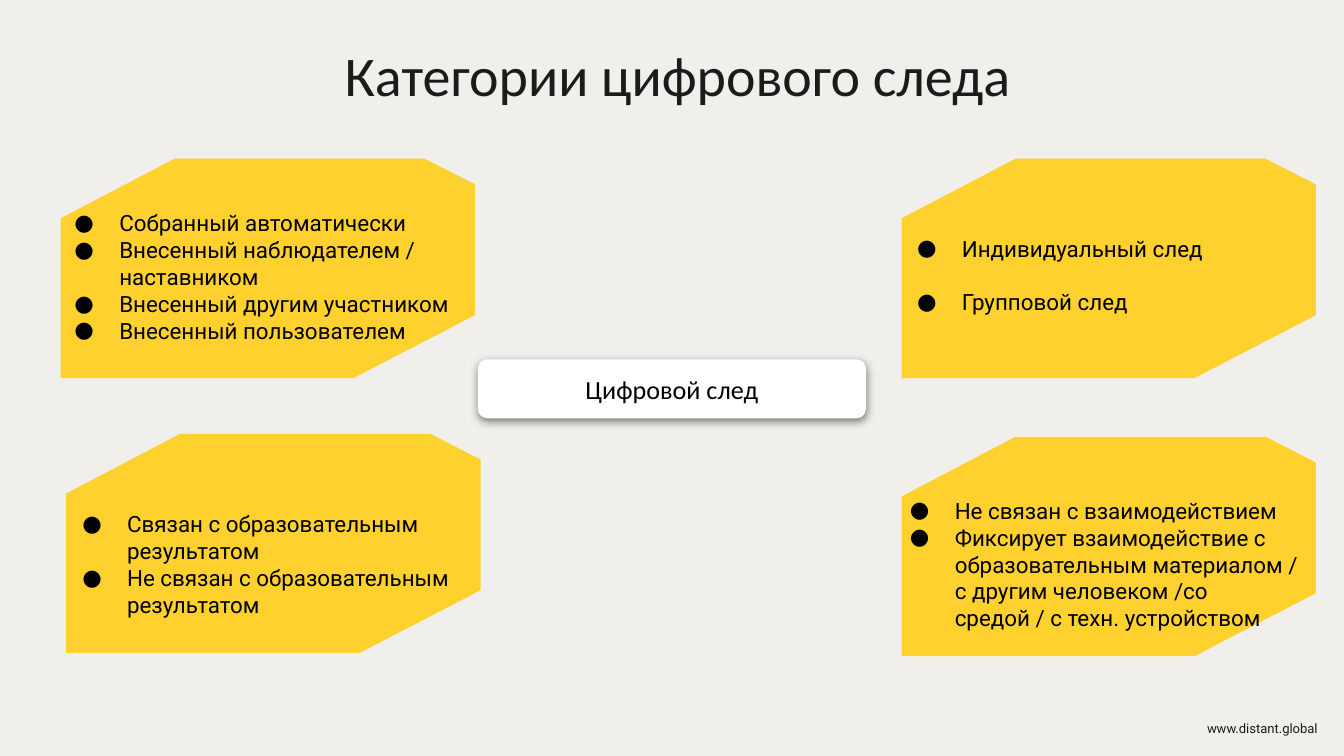
import pptx
import pptx.dml.color
import pptx.enum.shapes
import pptx.enum.text
import pptx.oxml
import pptx.oxml.ns
import pptx.util
from lxml import etree

Pt = pptx.util.Pt
ALIGN = pptx.enum.text.PP_ALIGN
ANCHOR = pptx.enum.text.MSO_ANCHOR

# Content
TITLE = "Категории цифрового следа"
CENTER = "Цифровой след"
FOOTER = "www.distant.global"
# Each category: panel corner, text box (left, top, width, height), item gap, items
CATEGORIES = [
    ((32.5, 85), (20.8, 105, 236.2, 87), 0, [
        "Собранный автоматически",
        "Внесенный наблюдателем / наставником",
        "Внесенный другим участником",
        "Внесенный пользователем",
    ]),
    ((35.5, 232.4), (25, 266.2, 236.2, 73), 0, [
        "Связан с образовательным результатом",
        "Не связан с образовательным результатом",
    ]),
    ((483, 85), (472.2, 118.6, 236.2, 58), 14.4, [
        "Индивидуальный след",
        "Групповой след",
    ]),
    ((483, 234), (468.4, 259, 236.2, 87), 0, [
        "Не связан с взаимодействием",
        "Фиксирует взаимодействие с образовательным материалом / "
        "с другим человеком /со средой / с техн. устройством",
    ]),
]

# Look
BACKGROUND, INK, BLACK, WHITE, YELLOW = "F0EFEB", "1B1B19", "000000", "FFFFFF", "FFD12E"
PANEL_OUTLINE = [(0, 117.5), (0, 32), (61, 0), (195, 0),
                 (222, 13.8), (222, 83.8), (157, 117.5)]
PADDING = 7.2
INDENT = 36
HANGING = 24


def color(hex_value):
    return pptx.dml.color.RGBColor.from_string(hex_value)


def fill_plain(shape, hex_value):
    shape.fill.solid()
    shape.fill.fore_color.rgb = color(hex_value)
    shape.line.fill.background()
    shape.shadow.inherit = False


def set_font(para, name, size, hex_value):
    para.font.name = name
    para.font.size = Pt(size)
    para.font.color.rgb = color(hex_value)


def set_frame(shape, padding):
    frame = shape.text_frame
    frame.word_wrap = True
    frame.margin_left = frame.margin_right = Pt(padding)
    frame.margin_top = frame.margin_bottom = Pt(padding)
    return frame


def add_text(page, place, padding=0):
    return set_frame(page.shapes.add_textbox(*map(Pt, place)), padding)


def add_bullet(para):
    properties = para._p.get_or_add_pPr()
    properties.set("marL", str(Pt(INDENT)))
    properties.set("indent", str(-Pt(HANGING)))
    tag = pptx.oxml.ns.qn
    bullet_color = etree.SubElement(properties, tag("a:buClr"))
    etree.SubElement(bullet_color, tag("a:srgbClr"), val=BLACK)
    etree.SubElement(properties, tag("a:buFont"), typeface="Roboto")
    etree.SubElement(properties, tag("a:buChar"), char="●")


def add_shadow(shape):
    tag = pptx.oxml.ns.qn
    effects = shape._element.spPr.find(tag("a:effectLst"))
    shadow = etree.SubElement(effects, tag("a:outerShdw"), blurRad=str(Pt(4.5)),
                              dist=str(Pt(1.5)), dir="5400000", rotWithShape="0")
    shade = etree.SubElement(shadow, tag("a:srgbClr"), val=BLACK)
    etree.SubElement(shade, tag("a:alpha"), val="50000")


def add_category(page, corner, place, gap, items):
    # Cut-corner panel
    points = [(Pt(corner[0] + x), Pt(corner[1] + y)) for x, y in PANEL_OUTLINE]
    builder = page.shapes.build_freeform(*points[0])
    builder.add_line_segments(points[1:], close=True)
    fill_plain(builder.convert_to_shape(), YELLOW)

    # Bulleted list
    frame = add_text(page, place, PADDING)
    for index, item in enumerate(items):
        para = frame.paragraphs[0] if index == 0 else frame.add_paragraph()
        para.text = item
        add_bullet(para)
        if index:
            para.space_before = Pt(gap)
        set_font(para, "Roboto", 12, BLACK)


def main():
    deck = pptx.Presentation()
    deck.slide_width, deck.slide_height = Pt(720), Pt(405)
    page = deck.slides.add_slide(deck.slide_layouts[6])
    page.background.fill.solid()
    page.background.fill.fore_color.rgb = color(BACKGROUND)

    # Footer address
    para = add_text(page, (646.6, 383, 62, 10)).paragraphs[0]
    para.text = FOOTER
    para.line_spacing = 1.33
    set_font(para, "Roboto", 7, INK)

    # Title
    para = add_text(page, (-9.4, 27.4, 745, 37.5)).paragraphs[0]
    para.text = TITLE
    para.alignment = ALIGN.CENTER
    para.line_spacing = 0.85
    set_font(para, "Calibri", 30, INK)

    # Central card
    card = page.shapes.add_shape(pptx.enum.shapes.MSO_SHAPE.ROUNDED_RECTANGLE,
                                 Pt(256), Pt(192.5), Pt(208), Pt(31.7))
    fill_plain(card, WHITE)
    add_shadow(card)
    frame = set_frame(card, PADDING)
    frame.vertical_anchor = ANCHOR.MIDDLE
    para = frame.paragraphs[0]
    para.text = CENTER
    para.alignment = ALIGN.CENTER
    set_font(para, "Calibri", 14, BLACK)

    # Categories
    for category in CATEGORIES:
        add_category(page, *category)

    deck.save("out.pptx")


if __name__ == "__main__":
    main()
